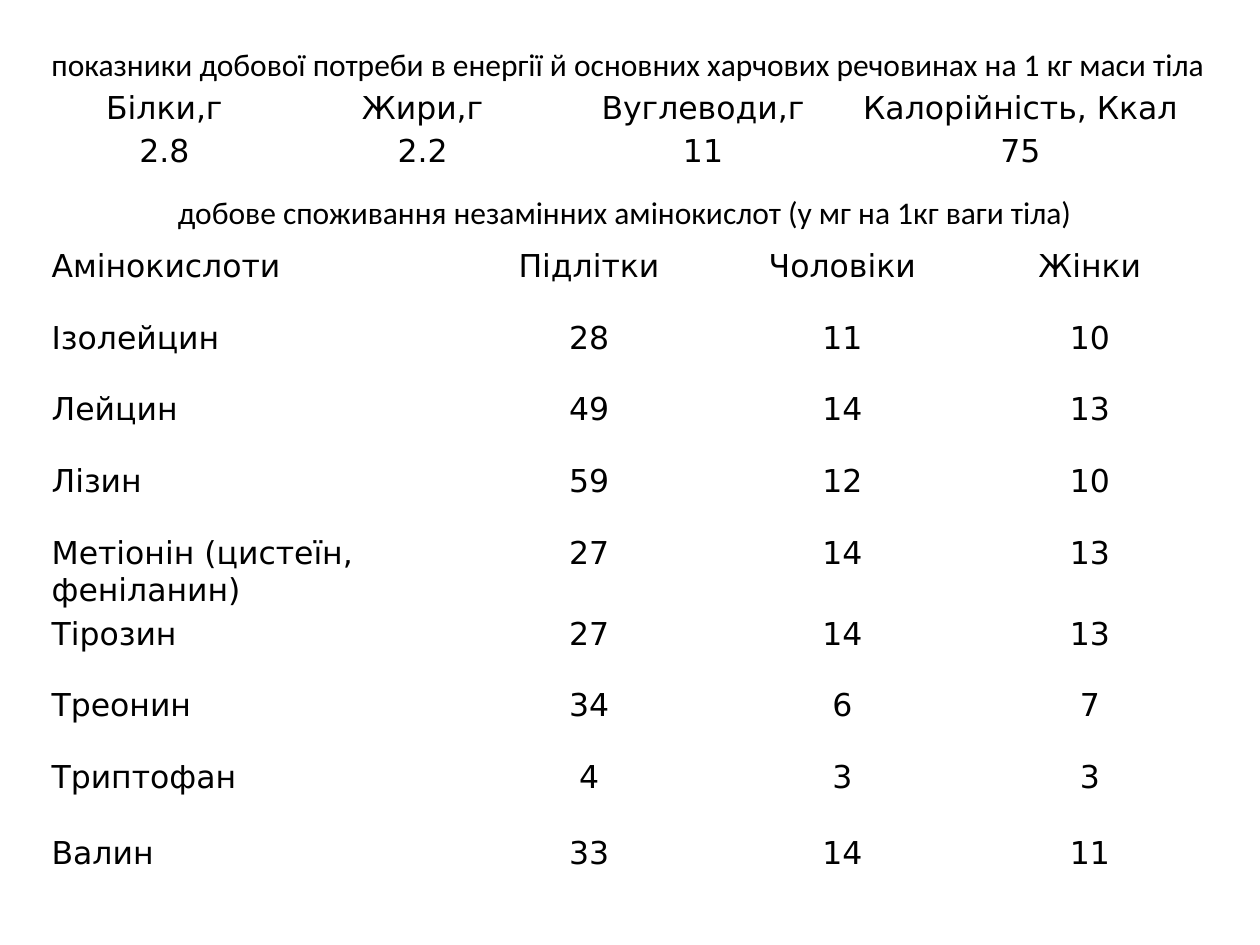
"""Build a slide with daily nutrient needs and essential amino acid intake."""
import pptx
import pptx.dml.color
import pptx.enum.text
import pptx.util

Inches = pptx.util.Inches
ALIGN = pptx.enum.text.PP_ALIGN
COLOURS = {"text": "000000"}
CELL_FORMAT = {
    "margin_left": Inches(0.02),
    "margin_right": Inches(0.02),
    "margin_top": Inches(0.02),
    "margin_bottom": Inches(0.02),
}


def write_text(frame, text, font_name, alignment):
    para = frame.paragraphs[0]
    para.alignment = alignment
    span = para.add_run()
    span.text = text
    for name, value in {"name": font_name, "size": pptx.util.Pt(18)}.items():
        setattr(span.font, name, value)
    span.font.color.rgb = pptx.dml.color.RGBColor.from_string(COLOURS["text"])


deck = pptx.Presentation()
deck.slide_width = Inches(10)
deck.slide_height = Inches(7.5)
page = deck.slides.add_slide(deck.slide_layouts[6])

captions = [
    ("показники добової потреби в енергії й основних харчових речовинах на 1 кг маси тіла",
     0.31, 9.45, ALIGN.LEFT),
    ("добове споживання незамінних амінокислот (у мг на 1кг ваги тіла)",
     1.48, 9.3, ALIGN.CENTER),
]
for text, top, width, alignment in captions:
    box = page.shapes.add_textbox(Inches(0.31), Inches(top), Inches(width), Inches(0.4))
    box.text_frame.word_wrap = True
    box.text_frame.auto_size = pptx.enum.text.MSO_AUTO_SIZE.SHAPE_TO_FIT_TEXT
    write_text(box.text_frame, text, "Calibri", alignment)

daily_needs = [
    ["Білки,г", "Жири,г", "Вуглеводи,г", "Калорійність, Ккал"],
    ["2.8", "2.2", "11", "75"],
]
amino_acids = [
    ["Амінокислоти", "Підлітки", "Чоловіки", "Жінки"],
    ["Ізолейцин", "28", "11", "10"],
    ["Лейцин", "49", "14", "13"],
    ["Лізин", "59", "12", "10"],
    ["Метіонін (цистеїн, феніланин)", "27", "14", "13"],
    ["Тірозин", "27", "14", "13"],
    ["Треонин", "34", "6", "7"],
    ["Триптофан", "4", "3", "3"],
    ["Валин", "33", "14", "11"],
]
tables = [
    (daily_needs, 0.31, 0.7, [1.99, 2.11, 2.34, 2.7], [0.28, 0.38], ALIGN.CENTER),
    (amino_acids, 0.39, 1.95, [3.28, 2.01, 2.01, 1.92],
     [0.57] * 7 + [0.6, 0.57], ALIGN.LEFT),
]
for rows, left, top, widths, heights, first_alignment in tables:
    table = page.shapes.add_table(
        len(rows), len(widths), Inches(left), Inches(top),
        Inches(sum(widths)), Inches(sum(heights))).table
    table.first_row = False
    table.horz_banding = False
    for column, width in zip(table.columns, widths):
        column.width = Inches(width)
    for row, height, values in zip(table.rows, heights, rows):
        row.height = Inches(height)
        for index, (cell, value) in enumerate(zip(row.cells, values)):
            cell.fill.background()
            for name, setting in CELL_FORMAT.items():
                setattr(cell, name, setting)
            alignment = ALIGN.CENTER if index else first_alignment
            write_text(cell.text_frame, value, "DejaVu Sans", alignment)

deck.save("out.pptx")
